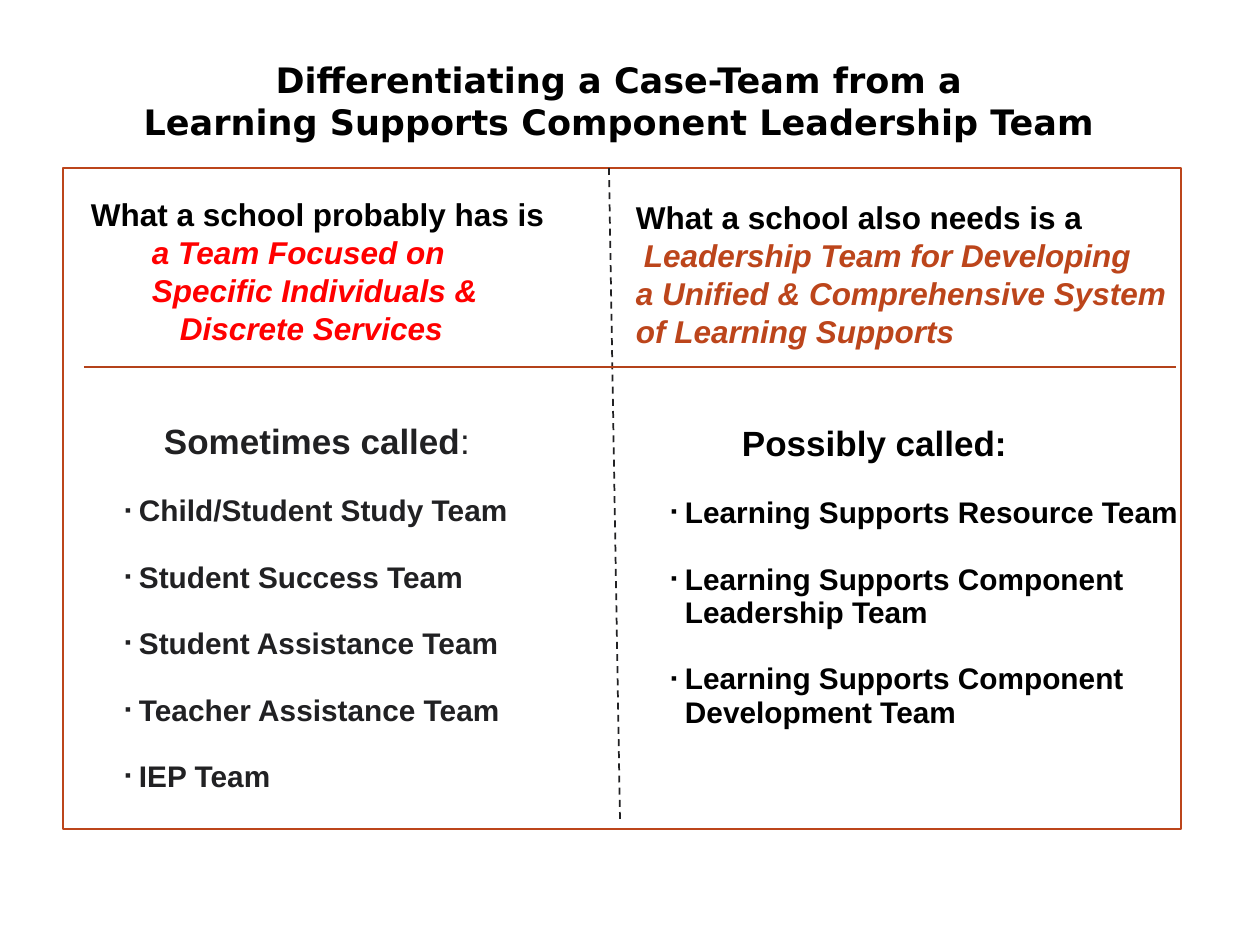
from lxml.etree import SubElement
from pptx import Presentation
from pptx.dml.color import RGBColor
from pptx.enum.dml import MSO_LINE_DASH_STYLE as Dash
from pptx.enum.shapes import MSO_CONNECTOR as Connector, MSO_SHAPE as Shape
from pptx.enum.text import MSO_ANCHOR as Anchor, MSO_AUTO_SIZE as AutoSize, PP_ALIGN as Align
from pptx.oxml.ns import qn
from pptx.util import Emu, Pt

BLACK, DARK, RED, RUST = "000000", "212123", "FF0000", "BC451B"
LIST_INDENT = 14


def px(length):
    """Convert pixels, 126 to the inch, to EMU."""
    return Emu(round(length * 914400 / 126))


def rgb(code):
    """Turn a hex string into a colour."""
    return RGBColor.from_string(code)


def place(box, left, top, width, height):
    """Position a text shape and give its frame plain settings."""
    box.left, box.top, box.width, box.height = map(px, (left, top, width, height))
    frame = box.text_frame
    frame.word_wrap = True
    frame.auto_size = AutoSize.NONE
    frame.vertical_anchor = Anchor.TOP
    frame.margin_left = frame.margin_right = px(9)
    frame.margin_top = frame.margin_bottom = px(5)
    return frame


def add_span(para, text, size, color, font="Arial", bold=True, italic=False):
    """Append formatted text to a paragraph."""
    span = para.add_run()
    span.text = text
    span.font.name, span.font.size = font, Pt(size)
    span.font.bold, span.font.italic = bold, italic
    span.font.color.rgb = rgb(color)


def add_text(frame, text, size, color, spacing, before=0, indent=0,
             align=Align.LEFT, bullet=None, **style):
    """Add a paragraph, reusing the first one while it is empty."""
    first = frame.paragraphs[0]
    para = frame.add_paragraph() if first.runs else first
    para.alignment = align
    para.line_spacing, para.space_before = Pt(spacing), Pt(before)
    props = para._p.get_or_add_pPr()
    props.set("marL", str(px(indent)))
    props.set("indent", str(px(-indent if bullet else 0)))
    if bullet:
        SubElement(props, qn("a:buSzPct"), val="60000")
        SubElement(props, qn("a:buFont"), typeface="Arial")
        SubElement(props, qn("a:buChar"), char=bullet)
    else:
        SubElement(props, qn("a:buNone"))
    for number, line in enumerate(text.split("\n")):
        if number:
            para.add_line_break()
        add_span(para, line, size, color, **style)
    return para


def add_title(box, lines):
    """Fill the title placeholder with centred lines."""
    frame = place(box, 73, 53, 1092, 145)
    for line in lines:
        add_text(frame, line, 20, BLACK, 24, align=Align.CENTER, font="DejaVu Sans")


def add_lead(page, area, opening, color, lines):
    """Add a column's opening words and its indented italic lines."""
    frame = place(page.shapes.add_textbox(0, 0, 0, 0), *area)
    add_text(frame, opening, 18, BLACK, 21.7)
    for indent, line in lines:
        add_text(frame, line, 18, color, 21.7, indent=indent, italic=True)


def add_list(box, area, color, heading, indent, colon_bold, items):
    """Fill a body placeholder with a heading and bulleted names."""
    frame = place(box, *area)
    para = add_text(frame, heading, 20, color, 19, indent=indent)
    add_span(para, ":", 20, color, bold=colon_bold)
    for item in items:
        add_text(frame, item, 17, color, 19, before=19, indent=LIST_INDENT, bullet="▪")


def add_frame(page, left, top, width, height):
    """Add the outlined rectangle around both columns."""
    frame = page.shapes.add_shape(Shape.RECTANGLE, *map(px, (left, top, width, height)))
    frame.shadow.inherit = False
    frame.fill.background()
    frame.line.color.rgb = rgb(RUST)
    frame.line.width = Pt(1)


def add_line(page, start, end, color, width, dash=None):
    """Add a straight line without a shadow."""
    line = page.shapes.add_connector(Connector.STRAIGHT, *map(px, start + end))
    line.line.color.rgb = rgb(color)
    line.line.width = Pt(width)
    if dash:
        line.line.dash_style = dash
    SubElement(line._element.spPr, qn("a:effectLst"))


def main():
    """Build the slide and save it."""
    deck = Presentation()
    deck.slide_width, deck.slide_height = px(1260), px(945)
    page = deck.slides.add_slide(deck.slide_layouts[3])
    title, left_list, right_list = list(page.placeholders)[:3]

    add_title(title, ["Differentiating a Case-Team from a",
                      "Learning Supports Component Leadership Team"])
    add_lead(page, (627, 193, 577, 170), "What a school also needs is a", RUST, [
        (8, "Leadership Team for Developing"),
        (0, "a Unified & Comprehensive System of Learning Supports")])
    add_lead(page, (82, 190, 475, 170), "What a school probably has is", RED, [
        (61, "a Team Focused on"),
        (61, "Specific Individuals &"),
        (89, "Discrete Services")])
    add_frame(page, 63, 168, 1118, 661)
    add_line(page, (609, 168), (620, 819), DARK, 1, Dash.DASH)
    add_list(left_list, (116, 423, 407, 400), DARK, "Sometimes called", 39, False, [
        "Child/Student Study Team",
        "Student Success Team",
        "Student Assistance Team",
        "Teacher Assistance Team",
        "IEP Team"])
    add_list(right_list, (662, 425, 568, 400), BLACK, "Possibly called", 71, True, [
        "Learning Supports Resource Team",
        "Learning Supports Component\nLeadership Team",
        "Learning Supports Component\nDevelopment Team"])
    add_line(page, (84, 367), (1176, 367), "B4421A", 0.75)
    deck.save("out.pptx")


if __name__ == "__main__":
    main()
